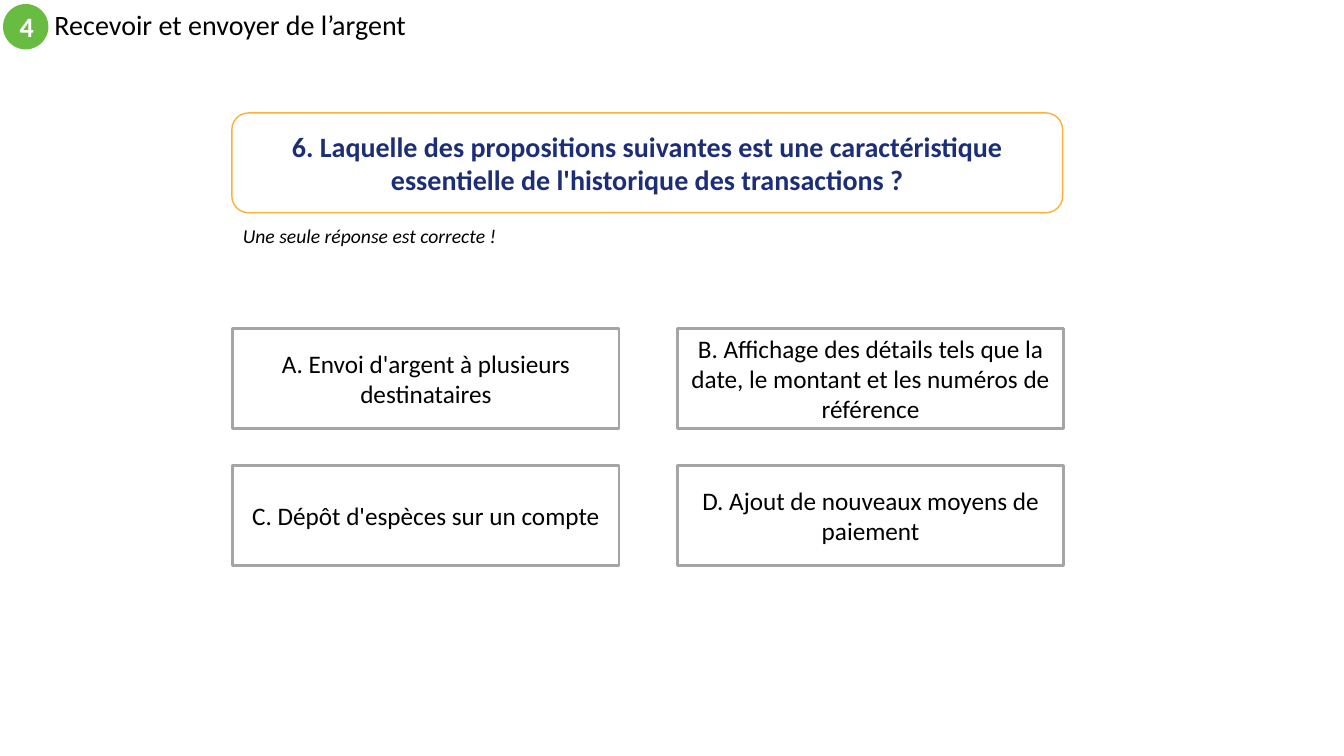
from dataclasses import dataclass

from pptx import Presentation
from pptx.dml.color import RGBColor
from pptx.enum.shapes import MSO_SHAPE
from pptx.enum.text import MSO_ANCHOR, MSO_AUTO_SIZE, PP_ALIGN
from pptx.util import Emu, Pt

PX = 9144
FONT = "Calibri"
HUES = {
    "white": "FFFFFF",
    "black": "000000",
    "green": "68BC42",
    "navy": "1C2E78",
    "amber": "FCB13A",
    "grey": "A5A5A5",
}
ANSWERS = [
    "A. Envoi d'argent à plusieurs destinataires",
    "B. Affichage des détails tels que la date, le montant et les numéros de référence",
    "C. Dépôt d'espèces sur un compte",
    "D. Ajout de nouveaux moyens de paiement",
]


@dataclass(frozen=True)
class Box:
    left: int
    top: int
    width: int
    height: int

    def emu(self) -> list[Emu]:
        return [Emu(n * PX) for n in (self.left, self.top, self.width, self.height)]


@dataclass(frozen=True)
class Style:
    size: int
    hue: str = "black"
    bold: bool = False
    italic: bool = False
    align: PP_ALIGN = PP_ALIGN.CENTER
    anchor: MSO_ANCHOR = MSO_ANCHOR.MIDDLE


@dataclass(frozen=True)
class Card:
    kind: MSO_SHAPE
    box: Box
    text: str
    style: Style
    fill: str = "white"
    line: str | None = None
    weight: int = 1


def tint(name: str) -> RGBColor:
    return RGBColor.from_string(HUES[name])


def write(shape, text: str, style: Style) -> None:
    frame = shape.text_frame
    frame.word_wrap = True
    frame.auto_size = MSO_AUTO_SIZE.NONE
    frame.vertical_anchor = style.anchor
    para = frame.paragraphs[0]
    para.alignment = style.align
    run = para.add_run()
    run.text = text
    font = run.font
    font.name, font.size = FONT, Pt(style.size)
    font.bold, font.italic = style.bold, style.italic
    font.color.rgb = tint(style.hue)


def draw(slide, card: Card) -> None:
    shape = slide.shapes.add_shape(card.kind, *card.box.emu())
    shape.shadow.inherit = False
    shape.fill.solid()
    shape.fill.fore_color.rgb = tint(card.fill)
    if card.line:
        shape.line.color.rgb = tint(card.line)
        shape.line.width = Pt(card.weight)
    else:
        shape.line.fill.background()
    write(shape, card.text, card.style)


def head(slide, text: str, box: Box) -> None:
    title = slide.shapes.title
    title.left, title.top, title.width, title.height = box.emu()
    write(title, text, Style(20, align=PP_ALIGN.LEFT))
    title.text_frame.paragraphs[0].line_spacing = 0.9


def main() -> None:
    """Build the quiz slide and save it."""
    deck = Presentation()
    deck.slide_width, deck.slide_height = Emu(1333 * PX), Emu(750 * PX)
    slide = deck.slides.add_slide(deck.slide_layouts[5])

    head(slide, "Recevoir et envoyer de l’argent", Box(44, 4, 800, 45))
    cards = [
        Card(MSO_SHAPE.OVAL, Box(3, 4, 45, 45), "4",
             Style(20, "white", bold=True), fill="green"),
        Card(MSO_SHAPE.ROUNDED_RECTANGLE, Box(230, 112, 824, 99),
             "6. Laquelle des propositions suivantes est une caractéristique "
             "essentielle de l'historique des transactions ?",
             Style(20, "navy", bold=True), line="amber"),
    ]
    for i, text in enumerate(ANSWERS):
        row, col = divmod(i, 2)
        box = Box(231 + col * 441, 326 + row * 136, 383, 99)
        cards.append(Card(MSO_SHAPE.RECTANGLE, box, text, Style(18),
                          line="grey", weight=2))
    for card in cards:
        draw(slide, card)

    hint = slide.shapes.add_textbox(*Box(231, 217, 318, 34).emu())
    write(hint, "Une seule réponse est correcte !",
          Style(14, italic=True, align=PP_ALIGN.LEFT, anchor=MSO_ANCHOR.TOP))
    deck.save("out.pptx")


if __name__ == "__main__":
    main()
